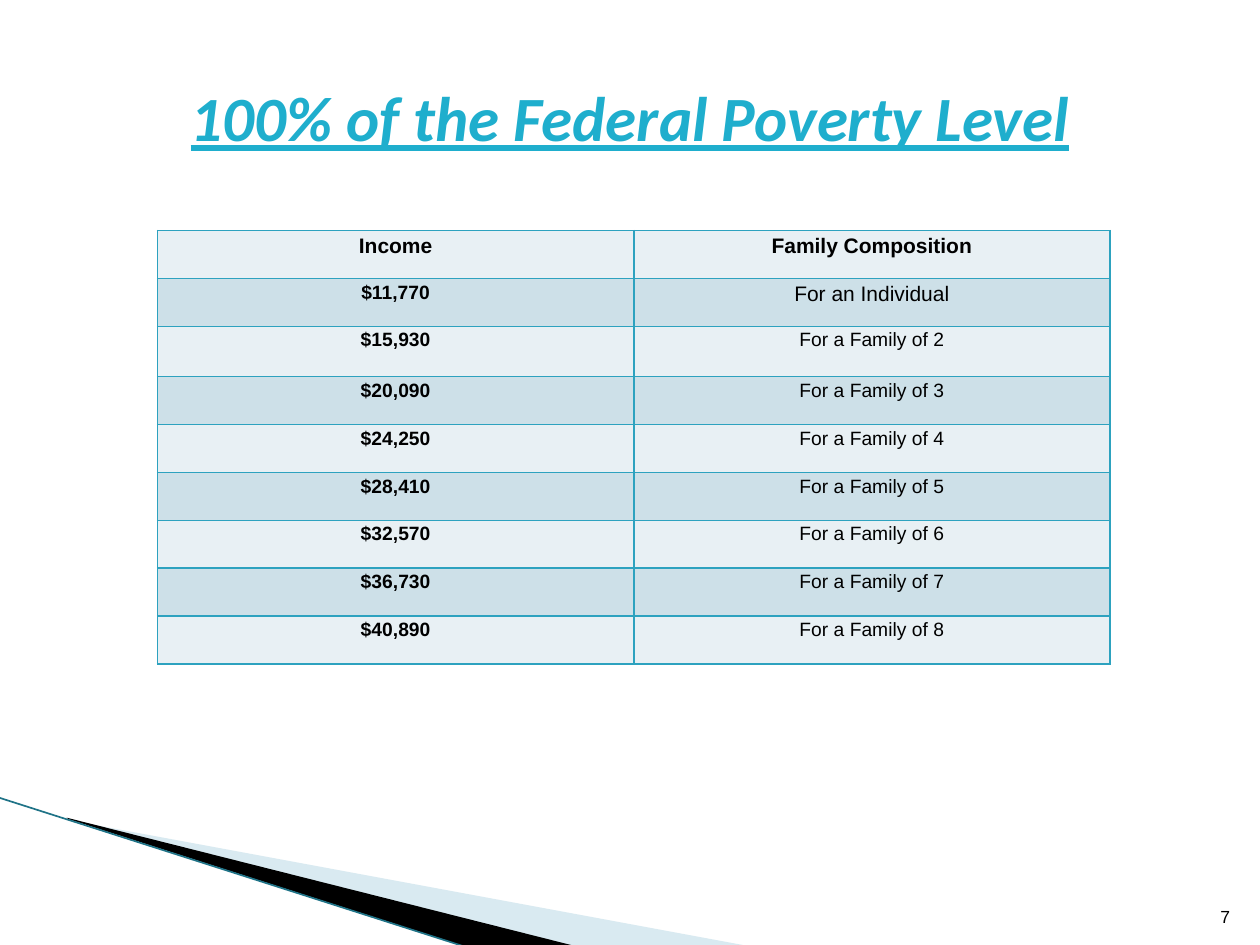
"""Build the slide with the federal poverty level table."""
from lxml import etree
from pptx import Presentation
from pptx.dml.color import RGBColor
from pptx.enum import shapes, text
from pptx.oxml import ns
from pptx.util import Inches, Pt

BLACK = RGBColor(0x00, 0x00, 0x00)
CYAN = RGBColor(0x1F, 0xAE, 0xCD)
TEAL = RGBColor(0x1F, 0x73, 0x87)
MIST = RGBColor(0xA0, 0xCB, 0xDC)
PALE = RGBColor(0xE8, 0xF0, 0xF4)
BLUE = RGBColor(0xCD, 0xE0, 0xE8)
EDGE = RGBColor(0x2D, 0xA2, 0xBF)


def write(frame, words, size=11, face="Arial", color=BLACK, bold=False,
          slant=False, under=False, align=text.PP_ALIGN.CENTER, space=None):
    para = frame.paragraphs[0]
    para.alignment = align
    para.line_spacing = space
    run = para.add_run()
    run.text = words
    font = run.font
    font.size, font.name = Pt(size), face
    font.bold, font.italic, font.underline = bold, slant, under
    font.color.rgb = color


def border(cell):
    props = cell._tc.get_or_add_tcPr()
    for at, side in enumerate(("lnL", "lnR", "lnT", "lnB")):
        line = etree.Element(ns.qn(f"a:{side}"), w=str(Pt(1)))
        fill = etree.SubElement(line, ns.qn("a:solidFill"))
        etree.SubElement(fill, ns.qn("a:srgbClr"), val=str(EDGE))
        props.insert(at, line)


deck = Presentation()
deck.slide_width, deck.slide_height = Inches(10), Inches(7.5)
slide = deck.slides.add_slide(deck.slide_layouts[6])

wedges = [
    (MIST, 40, [(0.55, 6.51), (5.95, 7.51), (4.56, 7.51), (0.55, 6.5)]),
    (BLACK, 100, [(0.53, 6.49), (4.57, 7.51), (3.72, 7.52), (0.54, 6.5)]),
]
for color, alpha, spots in wedges:
    spots = [(Inches(x), Inches(y)) for x, y in spots]
    pen = slide.shapes.build_freeform(*spots[0])
    pen.add_line_segments(spots[1:], close=True)
    wedge = pen.convert_to_shape()
    wedge.shadow.inherit = False
    wedge.fill.solid()
    wedge.fill.fore_color.rgb = color
    wedge.line.fill.background()
    if alpha < 100:
        tint = wedge._element.spPr.find(".//" + ns.qn("a:srgbClr"))
        etree.SubElement(tint, ns.qn("a:alpha"), val=str(alpha * 1000))

rule = slide.shapes.add_connector(
    shapes.MSO_CONNECTOR.STRAIGHT,
    Inches(-0.01), Inches(6.33), Inches(3.71), Inches(7.52))
rule.line.color.rgb = TEAL
rule.line.width = Pt(0.95)
etree.SubElement(rule._element.spPr, ns.qn("a:effectLst"))

incomes = ["$11,770", "$15,930", "$20,090", "$24,250",
           "$28,410", "$32,570", "$36,730", "$40,890"]
homes = ["For an Individual"] + [f"For a Family of {n}" for n in range(2, 9)]
rows = [("Income", "Family Composition"), *zip(incomes, homes)]

table = slide.shapes.add_table(
    len(rows), 2, Inches(1.25), Inches(1.83), Inches(7.57), Inches(3.45)).table
for col in table.columns:
    col.width = Inches(3.78)
for r, row in enumerate(rows):
    table.rows[r].height = Inches(0.4 if r == 2 else 0.38)
    for c, words in enumerate(row):
        cell = table.cell(r, c)
        cell.margin_left = cell.margin_right = Inches(0.07)
        cell.margin_top = cell.margin_bottom = 0
        cell.fill.solid()
        cell.fill.fore_color.rgb = BLUE if r % 2 else PALE
        border(cell)
        large = r == 0 or words == homes[0]
        write(cell.text_frame, words, size=12 if large else 11,
              bold=r == 0 or c == 0, space=1.15)

title = slide.shapes.add_textbox(
    Inches(0.5), Inches(0.3), Inches(9), Inches(1.25)).text_frame
title.word_wrap = True
title.vertical_anchor = text.MSO_ANCHOR.MIDDLE
write(title, "100% of the Federal Poverty Level", size=36, face="Calibri",
      color=CYAN, bold=True, slant=True, under=True)

page = slide.shapes.add_textbox(
    Inches(9.46), Inches(7.01), Inches(0.4), Inches(0.4)).text_frame
page.word_wrap = True
page.vertical_anchor = text.MSO_ANCHOR.BOTTOM
write(page, "7", size=10, align=text.PP_ALIGN.RIGHT)

deck.save("out.pptx")
